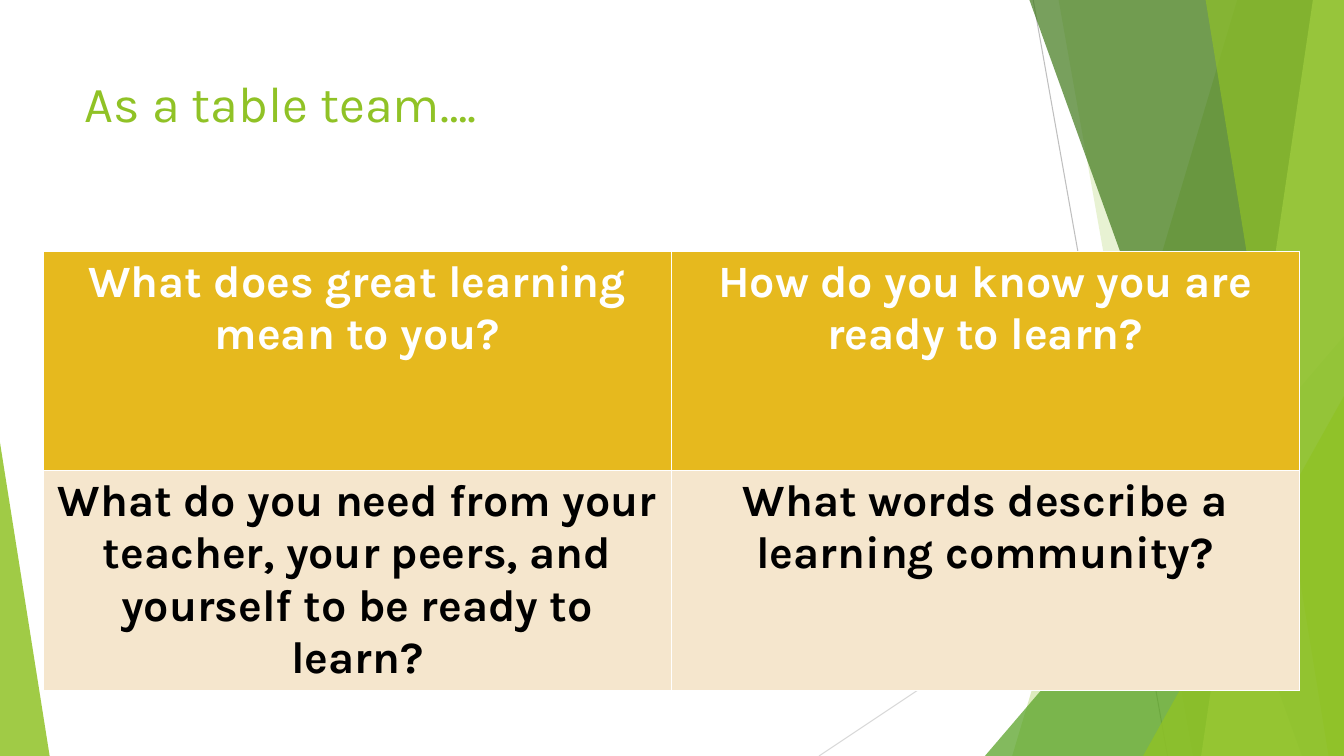
from lxml.etree import SubElement
from pptx import Presentation
from pptx.dml.color import RGBColor
from pptx.enum.shapes import MSO_CONNECTOR, MSO_SHAPE
from pptx.enum.text import MSO_ANCHOR, PP_ALIGN
from pptx.oxml.ns import qn
from pptx.util import Pt

WIDTH, HEIGHT = 960, 540
FACET_TOP = -0.6
FONT = "Karla"
COLORS = {
    "green": "90C226",
    "mid_green": "54A021",
    "dark_green": "3F7819",
    "pale_green": "C0E474",
    "gray": "BFBFBF",
    "light_gray": "D9D9D9",
    "gold": "E6B91E",
    "cream": "F5E6CD",
    "white": "FFFFFF",
    "black": "000000",
}
QUESTIONS = [
    ["What does great learning mean to you?",
     "How do you know you are ready to learn?"],
    ["What do you need from your teacher, your peers, and yourself to be ready to learn?",
     "What words describe a learning community?"],
]
ROW_STYLES = [("gold", "white"), ("cream", "black")]


def rgb(color):
    return RGBColor.from_string(COLORS[color])


def paint(shape, color, opacity):
    """Give a shape a see-through fill with no line or shadow."""
    shape.shadow.inherit = False
    shape.line.fill.background()
    shape.fill.solid()
    shape.fill.fore_color.rgb = rgb(color)
    srgb = shape.fill._xPr.find(f".//{qn('a:srgbClr')}")
    SubElement(srgb, qn("a:alpha"), val=str(opacity * 1000))


def add_facet(slide, top_x, bottom_x, color, opacity):
    """Add a band from a slanted left edge to the slide's right edge."""
    builder = slide.shapes.build_freeform(top_x, FACET_TOP, scale=Pt(1))
    builder.add_line_segments(
        [(WIDTH, FACET_TOP), (WIDTH, HEIGHT), (bottom_x, HEIGHT)], close=True)
    paint(builder.convert_to_shape(), color, opacity)


def add_corner(slide, left, top, width, apex, color, opacity):
    """Add a right triangle that stands on the slide's bottom edge."""
    corner = slide.shapes.add_shape(
        MSO_SHAPE.ISOSCELES_TRIANGLE, Pt(left), Pt(top), Pt(width), Pt(HEIGHT - top))
    corner.adjustments[0] = apex
    paint(corner, color, opacity)


def add_hairline(slide, x1, y1, x2, y2, color):
    hairline = slide.shapes.add_connector(
        MSO_CONNECTOR.STRAIGHT, Pt(x1), Pt(y1), Pt(x2), Pt(y2))
    hairline.line.color.rgb = rgb(color)
    hairline.line.width = Pt(0.75)
    SubElement(hairline._element.spPr, qn("a:effectLst"))


def add_facets(slide):
    add_hairline(slide, 738, 0, 834, HEIGHT, "gray")
    add_hairline(slide, WIDTH, 290, 585, HEIGHT, "light_gray")
    add_facet(slide, 884, 723, "green", 30)
    add_facet(slide, 756, 852, "green", 20)
    add_corner(slide, 703.5, 240, 256.5, 1, "mid_green", 72)
    add_facet(slide, 735, 929.5, "dark_green", 70)
    add_facet(slide, 938, 858, "pale_green", 70)
    add_facet(slide, 861, 949, "green", 65)
    add_corner(slide, 816.5, 283, 143.5, 1, "green", 80)
    add_corner(slide, 0, 316, 35.5, 0, "green", 85)


def set_title(slide, text):
    title = slide.shapes.title
    title.left, title.top, title.width, title.height = Pt(53.5), Pt(48), Pt(677), Pt(104)
    frame = title.text_frame
    frame.text = text
    frame.vertical_anchor = MSO_ANCHOR.TOP
    heading = frame.paragraphs[0]
    heading.alignment = PP_ALIGN.LEFT
    heading.font.name = FONT
    heading.font.size = Pt(36)
    heading.font.color.rgb = rgb("green")


def outline_cell(cell):
    """Draw thin white borders; they must stand before the cell's fill."""
    properties = cell._tc.get_or_add_tcPr()
    for position, side in enumerate(("lnL", "lnR", "lnT", "lnB")):
        border = properties.makeelement(qn(f"a:{side}"), {"w": str(Pt(1))})
        fill = SubElement(border, qn("a:solidFill"))
        SubElement(fill, qn("a:srgbClr"), val=COLORS["white"])
        properties.insert(position, border)


def fill_cell(cell, question, fill_color, text_color):
    cell.text = question
    cell.fill.solid()
    cell.fill.fore_color.rgb = rgb(fill_color)
    outline_cell(cell)
    paragraph = cell.text_frame.paragraphs[0]
    paragraph.alignment = PP_ALIGN.CENTER
    paragraph.font.name = FONT
    paragraph.font.size = Pt(32)
    paragraph.font.bold = True
    paragraph.font.color.rgb = rgb(text_color)


def add_questions(slide):
    table = slide.shapes.add_table(
        len(QUESTIONS), len(QUESTIONS[0]), Pt(31), Pt(179.5), Pt(897), Pt(313)).table
    for row, (questions, style) in enumerate(zip(QUESTIONS, ROW_STYLES)):
        for column, question in enumerate(questions):
            fill_cell(table.cell(row, column), question, *style)


def main():
    deck = Presentation()
    deck.slide_width, deck.slide_height = Pt(WIDTH), Pt(HEIGHT)
    slide = deck.slides.add_slide(deck.slide_layouts[5])
    add_facets(slide)
    set_title(slide, "As a table team….")
    add_questions(slide)
    deck.save("out.pptx")


if __name__ == "__main__":
    main()
